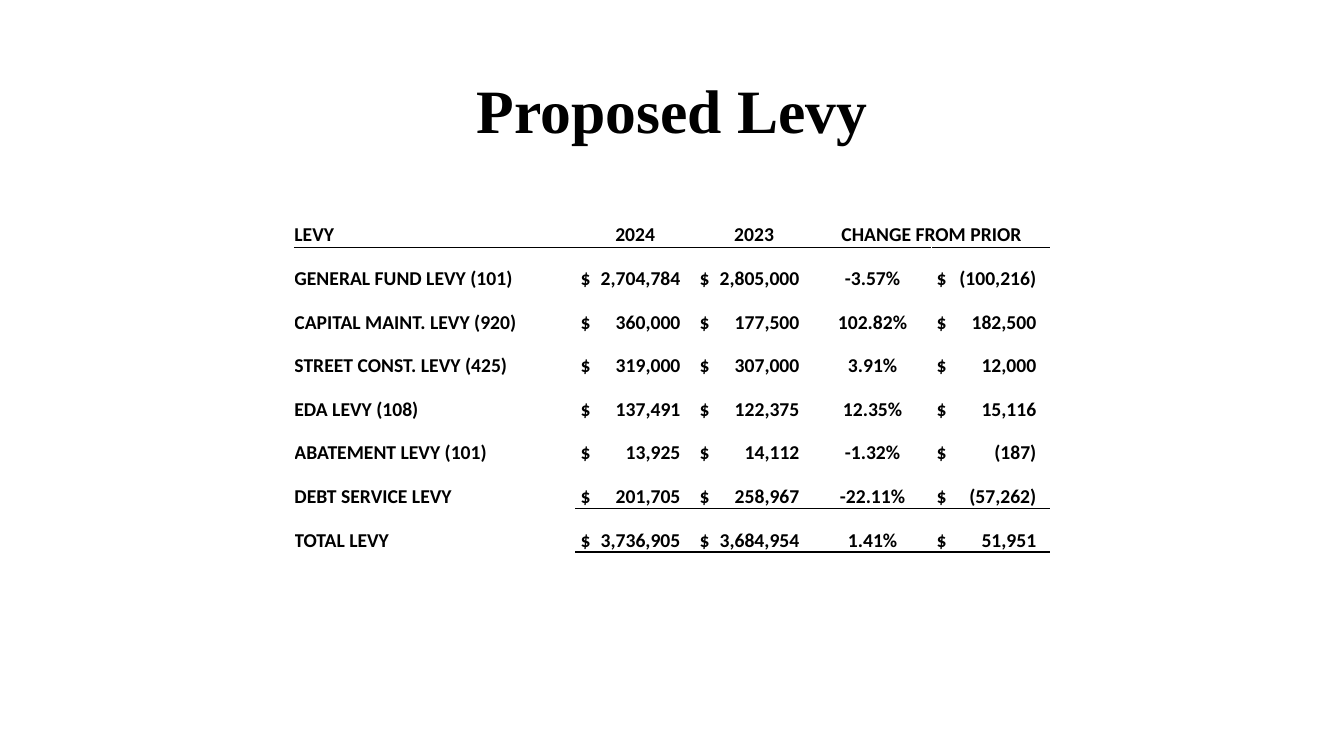
from lxml.etree import SubElement
from pptx import Presentation
from pptx.dml.color import RGBColor
from pptx.enum.text import MSO_ANCHOR as Anchor, PP_ALIGN as Align
from pptx.oxml.ns import qn
from pptx.util import Inches, Pt

# Content
TITLE = "Proposed Levy"
HEADINGS = ("LEVY", "2024", "2023", "CHANGE FROM PRIOR", "")
LEVIES = [
    ("GENERAL FUND LEVY (101)", "2,704,784", "2,805,000", "-3.57%", "(100,216)"),
    ("CAPITAL MAINT. LEVY (920)", "360,000", "177,500", "102.82%", "182,500"),
    ("STREET CONST. LEVY (425)", "319,000", "307,000", "3.91%", "12,000"),
    ("EDA LEVY (108)", "137,491", "122,375", "12.35%", "15,116"),
    ("ABATEMENT LEVY (101)", "13,925", "14,112", "-1.32%", "(187)"),
    ("DEBT SERVICE LEVY", "201,705", "258,967", "-22.11%", "(57,262)"),
    ("TOTAL LEVY", "3,736,905", "3,684,954", "1.41%", "51,951"),
]

# Layout, in inches
SLIDE_W, SLIDE_H = 13.33, 7.5
COLUMNS = (2.79, 1.18, 1.18, 1.17, 1.17)
ROW_H = 3.46 / 8
TABLE_LEFT, TABLE_TOP = (SLIDE_W - sum(COLUMNS)) / 2, 2.02
AMOUNT_COLUMNS, PERCENT_COLUMN = (1, 2, 4), 3
AMOUNT_INSET, AMOUNT_END = 0.05, 0.99
THIN, THICK = 0.5, 2
BLACK = RGBColor(0, 0, 0)


def write(frame, text, font="Calibri", size=14, align=Align.LEFT, tab=None, spacing=None):
    paragraph = frame.paragraphs[0]
    paragraph.alignment = align
    if spacing:
        paragraph.line_spacing = spacing
    if tab:
        tabs = SubElement(paragraph._p.get_or_add_pPr(), qn("a:tabLst"))
        SubElement(tabs, qn("a:tab"), pos=str(Inches(tab)), algn="r")
    run = paragraph.add_run()
    run.text = text
    run.font.name, run.font.size, run.font.bold = font, Pt(size), True
    run.font.color.rgb = BLACK


def rule(cell, edge, width):
    line = SubElement(cell._tc.get_or_add_tcPr(), qn(f"a:ln{edge}"), w=str(Pt(width)))
    fill = SubElement(line, qn("a:solidFill"))
    SubElement(fill, qn("a:srgbClr"), val=str(BLACK))


def rule_below(row, col):
    """Width of the line under a cell, or None."""
    if row == 0:
        return THIN
    if col > 0:
        return {len(LEVIES) - 1: THIN, len(LEVIES): THICK}.get(row)
    return None


deck = Presentation()
deck.slide_width, deck.slide_height = Inches(SLIDE_W), Inches(SLIDE_H)
slide = deck.slides.add_slide(deck.slide_layouts[5])

# Title
title = slide.shapes.title
title.left, title.top = Inches(0.92), Inches(0.4)
title.width, title.height = Inches(11.5), Inches(1.45)
title.text_frame.vertical_anchor = Anchor.MIDDLE
write(title.text_frame, TITLE, font="Times New Roman", size=44, align=Align.CENTER, spacing=0.9)

# Levy table
rows = [HEADINGS] + LEVIES
levy_table = slide.shapes.add_table(
    len(rows), len(COLUMNS), Inches(TABLE_LEFT), Inches(TABLE_TOP),
    Inches(sum(COLUMNS)), Inches(ROW_H * len(rows))).table
levy_table.first_row = levy_table.horz_banding = False
for column, width in zip(levy_table.columns, COLUMNS):
    column.width = Inches(width)

for r, values in enumerate(rows):
    levy_table.rows[r].height = Inches(ROW_H)
    for c, value in enumerate(values):
        cell = levy_table.cell(r, c)
        is_amount = r > 0 and c in AMOUNT_COLUMNS
        above = rule_below(r - 1, c) if r else None
        for edge, width in (("T", above), ("B", rule_below(r, c))):
            if width:
                rule(cell, edge, width)
        cell.fill.background()
        cell.vertical_anchor = Anchor.BOTTOM
        cell.margin_top = cell.margin_right = cell.margin_bottom = 0
        cell.margin_left = Inches(AMOUNT_INSET if is_amount else 0)
        if is_amount:
            write(cell.text_frame, f"$\t{value}", tab=AMOUNT_END)
        elif value:
            centred = c == PERCENT_COLUMN or (r == 0 and c > 0)
            write(cell.text_frame, value, align=Align.CENTER if centred else Align.LEFT)

levy_table.cell(0, 3).merge(levy_table.cell(0, 4))

deck.save("out.pptx")
